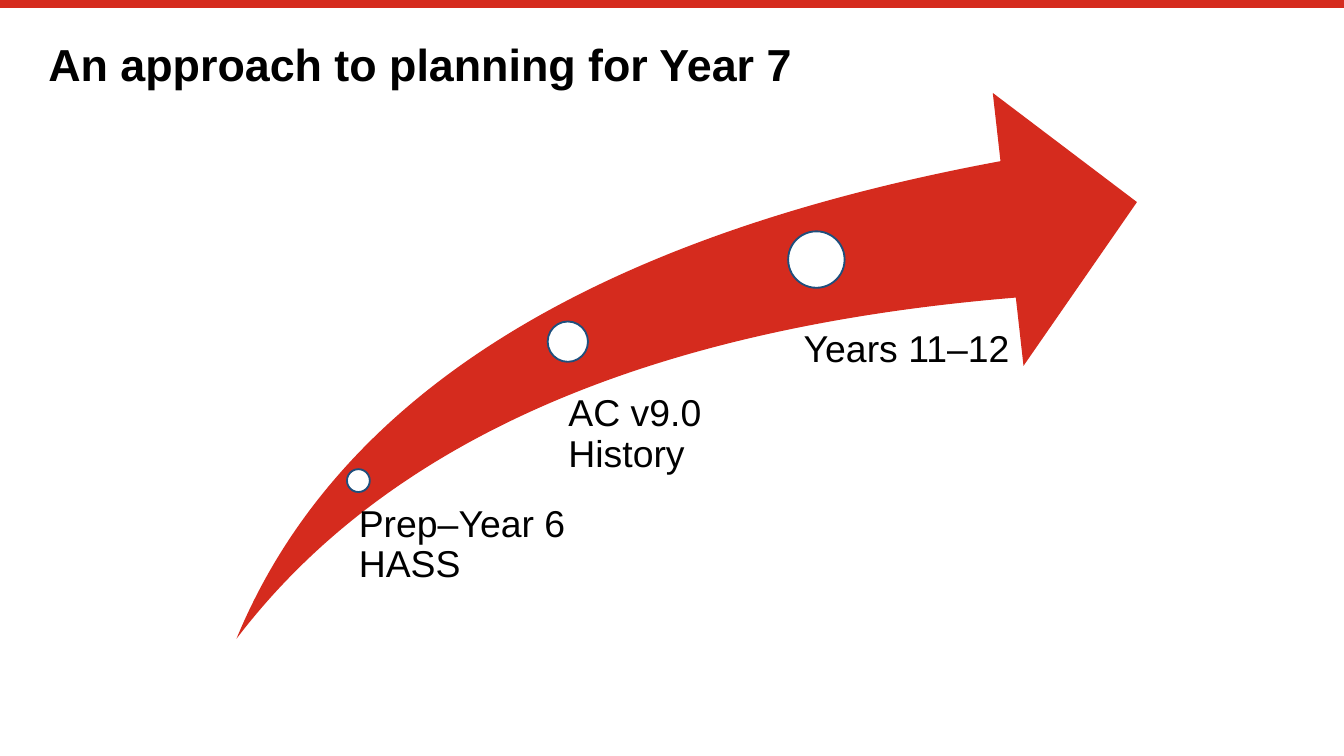
import pptx
import pptx.dml.color
import pptx.enum.shapes
import pptx.enum.text
import pptx.util

RED = pptx.dml.color.RGBColor(0xD5, 0x2B, 0x1E)
BLUE = pptx.dml.color.RGBColor(0x1E, 0x4F, 0x7D)
WHITE = pptx.dml.color.RGBColor(0xFF, 0xFF, 0xFF)
BLACK = pptx.dml.color.RGBColor(0, 0, 0)

SLIDE_WIDTH = pptx.util.Inches(10)
SLIDE_HEIGHT = SLIDE_WIDTH * 9 // 16
FONT = "Arial"

TITLE = "An approach to planning for Year 7"
TITLE_AREA = (3.6, 5.33, 92.9, 6.93)
ARROW_AREA = (17.6, 12.3, 67, 72.2)
MILESTONES = [
    {"label": "Prep–Year 6 HASS", "centre": (26.67, 63.58), "diameter": 1.7,
     "area": (25.8, 66.84, 20.3, 10.84), "inset": 0.9},
    {"label": "AC v9.0 History", "centre": (42.25, 45.2), "diameter": 3,
     "area": (40.7, 52.2, 15.6, 10.84), "inset": 1.6},
    {"label": "Years 11–12", "centre": (60.74, 34.33), "diameter": 4.2,
     "area": (57.6, 43.73, 18.8, 5.33), "inset": 2.2},
]


def across(percent):
    return round(SLIDE_WIDTH * percent / 100)


def down(percent):
    return round(SLIDE_HEIGHT * percent / 100)


def box(area):
    left, top, width, height = area
    return across(left), down(top), across(width), down(height)


def write(shape, text, size, bold, anchor, inset=0):
    frame = shape.text_frame
    frame.text = text
    frame.word_wrap = True
    frame.vertical_anchor = anchor
    frame.margin_left = across(inset)
    frame.margin_top = frame.margin_right = frame.margin_bottom = 0
    paragraph = frame.paragraphs[0]
    paragraph.alignment = pptx.enum.text.PP_ALIGN.LEFT
    paragraph.line_spacing = 0.9
    font = paragraph.runs[0].font
    font.name = FONT
    font.size = pptx.util.Pt(size)
    font.bold = bold
    font.color.rgb = BLACK


def add_filled(slide, kind, position, color):
    shape = slide.shapes.add_shape(kind, *position)
    shape.shadow.inherit = False
    shape.fill.solid()
    shape.fill.fore_color.rgb = color
    shape.line.fill.background()
    return shape


def add_top_rule(slide):
    middle = down(0.53)
    rule = slide.shapes.add_connector(
        pptx.enum.shapes.MSO_CONNECTOR.STRAIGHT, 0, middle, SLIDE_WIDTH, middle)
    rule.line.color.rgb = RED
    rule.line.width = pptx.util.Pt(4.2)
    properties = rule.element.spPr
    properties.append(properties.makeelement(pptx.oxml.ns.qn("a:effectLst"), {}))


def add_milestone(slide, milestone):
    x, y = milestone["centre"]
    diameter = across(milestone["diameter"])
    position = (across(x) - diameter // 2, down(y) - diameter // 2, diameter, diameter)
    circle = add_filled(slide, pptx.enum.shapes.MSO_SHAPE.OVAL, position, WHITE)
    circle.line.color.rgb = BLUE
    circle.line.width = pptx.util.Pt(1)
    label = slide.shapes.add_textbox(*box(milestone["area"]))
    write(label, milestone["label"], 20, False,
          pptx.enum.text.MSO_ANCHOR.TOP, milestone["inset"])
    label.text_frame.auto_size = pptx.enum.text.MSO_AUTO_SIZE.SHAPE_TO_FIT_TEXT


def main():
    presentation = pptx.Presentation()
    presentation.slide_width = SLIDE_WIDTH
    presentation.slide_height = SLIDE_HEIGHT
    slide = presentation.slides.add_slide(presentation.slide_layouts[5])

    add_top_rule(slide)
    title = slide.shapes.title
    title.left, title.top, title.width, title.height = box(TITLE_AREA)
    write(title, TITLE, 24, True, pptx.enum.text.MSO_ANCHOR.MIDDLE)

    arrow = add_filled(
        slide, pptx.enum.shapes.MSO_SHAPE.SWOOSH_ARROW, box(ARROW_AREA), RED)
    arrow.adjustments[0] = 0.25
    arrow.adjustments[1] = 0.25
    for milestone in MILESTONES:
        add_milestone(slide, milestone)

    presentation.save("out.pptx")


if __name__ == "__main__":
    main()
